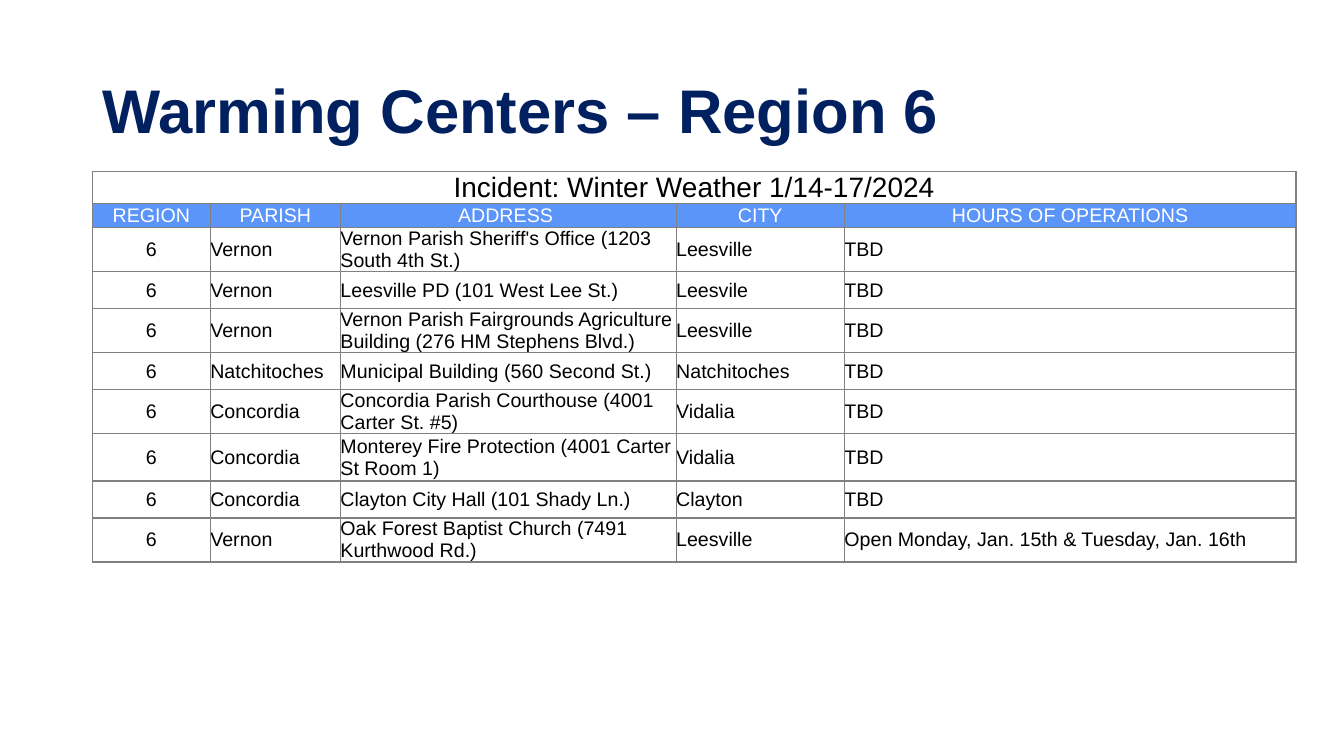
from dataclasses import dataclass

from lxml import etree
from pptx import Presentation
from pptx import util as u
from pptx.dml.color import RGBColor
from pptx.enum import text
from pptx.oxml import ns


@dataclass(frozen=True)
class Theme:
    font: str = "Arial"
    navy: str = "002060"
    blue: str = "5B95F9"
    black: str = "000000"
    white: str = "FFFFFF"
    grey: str = "808080"
    title_size: int = 44
    incident_size: int = 20
    cell_size: int = 14
    border_width: int = 1


THEME = Theme()
LEFT = u.Cm(2.33)
COLUMN_WIDTHS = [2.97, 3.28, 8.46, 4.24, 11.38]
ROW_HEIGHT = 0.93
HEADING_HEIGHT = 0.61
TALL_ROW_HEIGHT = 1.19
TALL_ADDRESS = "Monterey Fire Protection (4001 Carter St Room 1)"

INCIDENT = "Incident: Winter Weather 1/14-17/2024"
HEADINGS = ["REGION", "PARISH", "ADDRESS ", "CITY", "HOURS OF OPERATIONS"]
CENTERS = [
    ["6", "Vernon", "Vernon Parish Sheriff's Office (1203 South 4th St.)", "Leesville", "TBD"],
    ["6", "Vernon", "Leesville PD (101 West Lee St.)", "Leesvile", "TBD"],
    ["6", "Vernon", "Vernon Parish Fairgrounds Agriculture Building (276 HM Stephens Blvd.)",
     "Leesville", "TBD"],
    ["6", "Natchitoches", "Municipal Building (560 Second St.)", "Natchitoches", "TBD"],
    ["6", "Concordia", "Concordia Parish Courthouse (4001 Carter St. #5)", "Vidalia", "TBD"],
    ["6", "Concordia", TALL_ADDRESS, "Vidalia", "TBD"],
    ["6", "Concordia", "Clayton City Hall (101 Shady Ln.)", "Clayton", "TBD"],
    ["6", "Vernon", "Oak Forest Baptist Church (7491 Kurthwood Rd.)", "Leesville",
     "Open Monday, Jan. 15th & Tuesday, Jan. 16th"],
]


def format_runs(paragraph, size, color, bold=False):
    for run in paragraph.runs:
        run.font.name = THEME.font
        run.font.size = u.Pt(size)
        run.font.bold = bold
        run.font.color.rgb = RGBColor.from_string(color)


def add_title(slide, wording):
    title = slide.shapes.title
    title.left, title.top = LEFT, u.Cm(1.01)
    title.width, title.height = u.Cm(29.21), u.Cm(3.68)
    frame = title.text_frame
    frame.text = wording
    frame.word_wrap = True
    frame.auto_size = text.MSO_AUTO_SIZE.NONE
    frame.vertical_anchor = text.MSO_ANCHOR.MIDDLE
    paragraph = frame.paragraphs[0]
    paragraph.alignment = text.PP_ALIGN.LEFT
    paragraph.line_spacing = 0.9
    format_runs(paragraph, THEME.title_size, THEME.navy, bold=True)


def add_borders(cell):
    properties = cell._tc.get_or_add_tcPr()
    for side in ("a:lnL", "a:lnR", "a:lnT", "a:lnB"):
        line = etree.SubElement(properties, ns.qn(side), w=str(u.Pt(THEME.border_width)))
        fill = etree.SubElement(line, ns.qn("a:solidFill"))
        etree.SubElement(fill, ns.qn("a:srgbClr"), val=THEME.grey)


def fill_cell(cell, wording, size, color, fill, centered, inset):
    cell.text_frame.text = wording
    cell.vertical_anchor = text.MSO_ANCHOR.MIDDLE
    cell.margin_left = cell.margin_right = cell.margin_top = inset
    cell.margin_bottom = 0
    add_borders(cell)
    cell.fill.solid()
    cell.fill.fore_color.rgb = RGBColor.from_string(fill)
    paragraph = cell.text_frame.paragraphs[0]
    paragraph.alignment = text.PP_ALIGN.CENTER if centered else text.PP_ALIGN.LEFT
    format_runs(paragraph, size, color)


def add_centers_table(slide):
    heights = [HEADING_HEIGHT] * 2 + [
        TALL_ROW_HEIGHT if center[2] == TALL_ADDRESS else ROW_HEIGHT for center in CENTERS]
    frame = slide.shapes.add_table(len(heights), len(COLUMN_WIDTHS), LEFT, u.Cm(4.32),
                                   u.Cm(sum(COLUMN_WIDTHS)), u.Cm(sum(heights)))
    table = frame.table
    table.first_row = table.horz_banding = False
    for column, width in zip(table.columns, COLUMN_WIDTHS):
        column.width = u.Cm(width)
    for row, height in zip(table.rows, heights):
        row.height = u.Cm(height)

    heading_inset = u.Cm(0.02)
    table.cell(0, 0).merge(table.cell(0, len(COLUMN_WIDTHS) - 1))
    for index, cell in enumerate(table.rows[0].cells):
        fill_cell(cell, "" if index else INCIDENT, THEME.incident_size, THEME.black,
                  THEME.white, True, heading_inset)
    for cell, heading in zip(table.rows[1].cells, HEADINGS):
        fill_cell(cell, heading, THEME.cell_size, THEME.white, THEME.blue, True, heading_inset)
    for row_index, center in enumerate(CENTERS, start=2):
        for column_index, wording in enumerate(center):
            fill_cell(table.cell(row_index, column_index), wording, THEME.cell_size,
                      THEME.black, THEME.white, column_index == 0, 0)


def main():
    presentation = Presentation()
    presentation.slide_width, presentation.slide_height = u.Cm(33.87), u.Cm(19.05)
    slide = presentation.slides.add_slide(presentation.slide_layouts.get_by_name("Title Only"))
    add_title(slide, "Warming Centers – Region 6")
    add_centers_table(slide)
    presentation.save("out.pptx")


if __name__ == "__main__":
    main()
